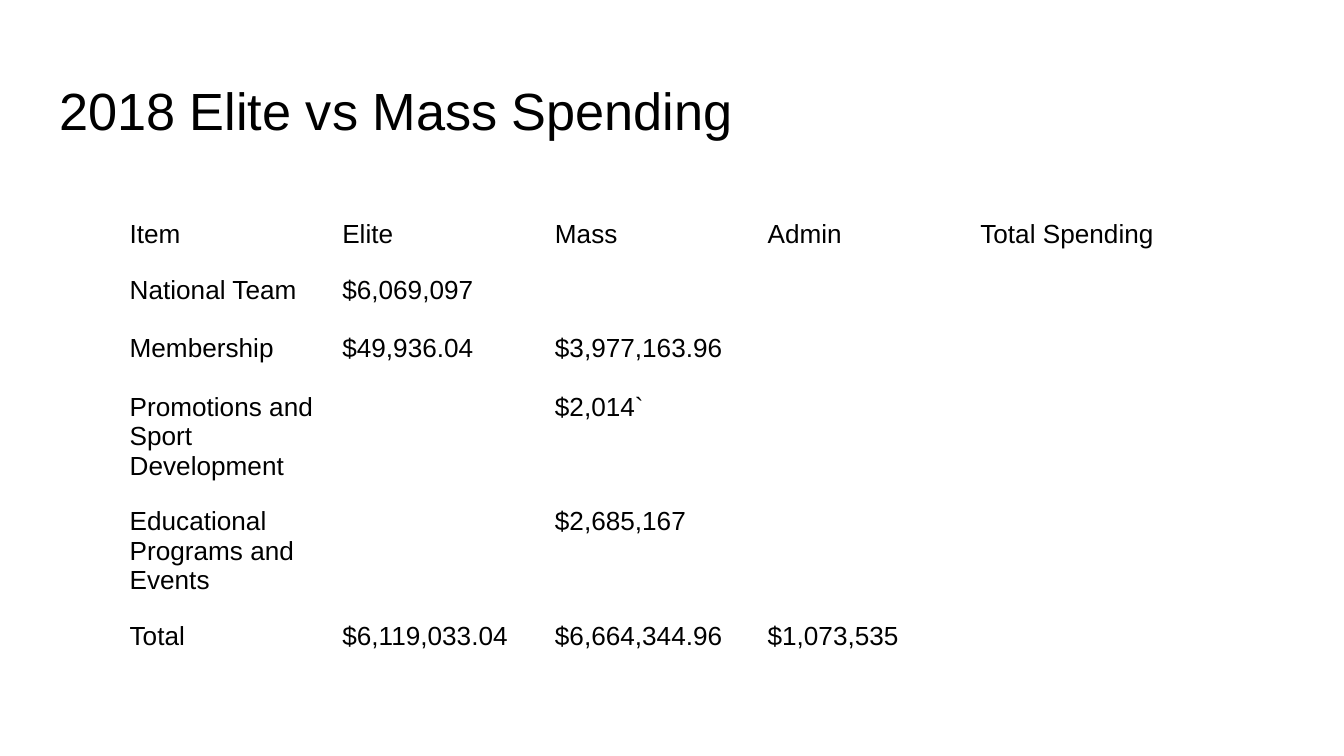
from lxml.etree import SubElement
from pptx import Presentation
from pptx.dml.color import RGBColor
from pptx.enum.text import MSO_ANCHOR, MSO_AUTO_SIZE, PP_ALIGN
from pptx.oxml.ns import qn
from pptx.util import Cm, Pt

TITLE = "2018 Elite vs Mass Spending"
ROWS = [
    ("Item", "Elite", "Mass", "Admin", "Total Spending"),
    ("National Team", "$6,069,097", "", "", ""),
    ("Membership", "$49,936.04", "$3,977,163.96", "", ""),
    ("Promotions and Sport Development", "", "$2,014`", "", ""),
    ("Educational Programs and Events", "", "$2,685,167", "", ""),
    ("Total", "$6,119,033.04", "$6,664,344.96", "$1,073,535", ""),
]

THEME = {
    "font": "Arial",
    "text": RGBColor(0, 0, 0),
    "title_size": Pt(28),
    "table_size": Pt(14),
}
INSET = Cm(0.25)
MARGINS = {f"margin_{side}": INSET for side in ("left", "top", "right", "bottom")}
TITLE_BOX = {"left": Cm(0.87), "top": Cm(1.23), "width": Cm(23.67), "height": Cm(1.6)}
TABLE_LEFT, TABLE_TOP = Cm(2.2), Cm(3.9)
COLUMN_WIDTH, ROW_HEIGHT = Cm(4.02), Cm(1.06)


def set_values(target, values):
    for name, value in values.items():
        setattr(target, name, value)


def write_text(paragraph, text, size):
    """Fill one left-aligned paragraph; an empty one still gets the type size."""
    paragraph.alignment = PP_ALIGN.LEFT
    if text:
        run = paragraph.add_run()
        run.text = text
        set_values(run.font, {"name": THEME["font"], "size": size, "bold": False})
        run.font.color.rgb = THEME["text"]
    else:
        # Keeps empty cells from stretching their row to the default type size.
        end_format = SubElement(paragraph._p, qn("a:endParaRPr"))
        end_format.set("sz", str(int(size.pt * 100)))


def add_title(slide):
    title = slide.shapes.title
    set_values(title, TITLE_BOX)
    frame_format = {
        "word_wrap": True,
        "auto_size": MSO_AUTO_SIZE.NONE,
        "vertical_anchor": MSO_ANCHOR.TOP,
    }
    set_values(title.text_frame, MARGINS | frame_format)
    write_text(title.text_frame.paragraphs[0], TITLE, THEME["title_size"])


def add_spending_table(slide):
    row_count, column_count = len(ROWS), len(ROWS[0])
    table = slide.shapes.add_table(
        row_count, column_count, TABLE_LEFT, TABLE_TOP,
        COLUMN_WIDTH * column_count, ROW_HEIGHT * row_count,
    ).table
    set_values(table, {"first_row": False, "horz_banding": False})
    for column in table.columns:
        column.width = COLUMN_WIDTH
    for row, texts in zip(table.rows, ROWS):
        row.height = ROW_HEIGHT
        for cell, text in zip(row.cells, texts):
            cell.fill.background()
            set_values(cell, MARGINS | {"vertical_anchor": MSO_ANCHOR.TOP})
            write_text(cell.text_frame.paragraphs[0], text, THEME["table_size"])


def main():
    presentation = Presentation()
    set_values(presentation, {"slide_width": Cm(25.4), "slide_height": Cm(14.28)})
    title_only = presentation.slide_layouts[5]
    slide = presentation.slides.add_slide(title_only)
    add_title(slide)
    add_spending_table(slide)
    presentation.save("out.pptx")


if __name__ == "__main__":
    main()
